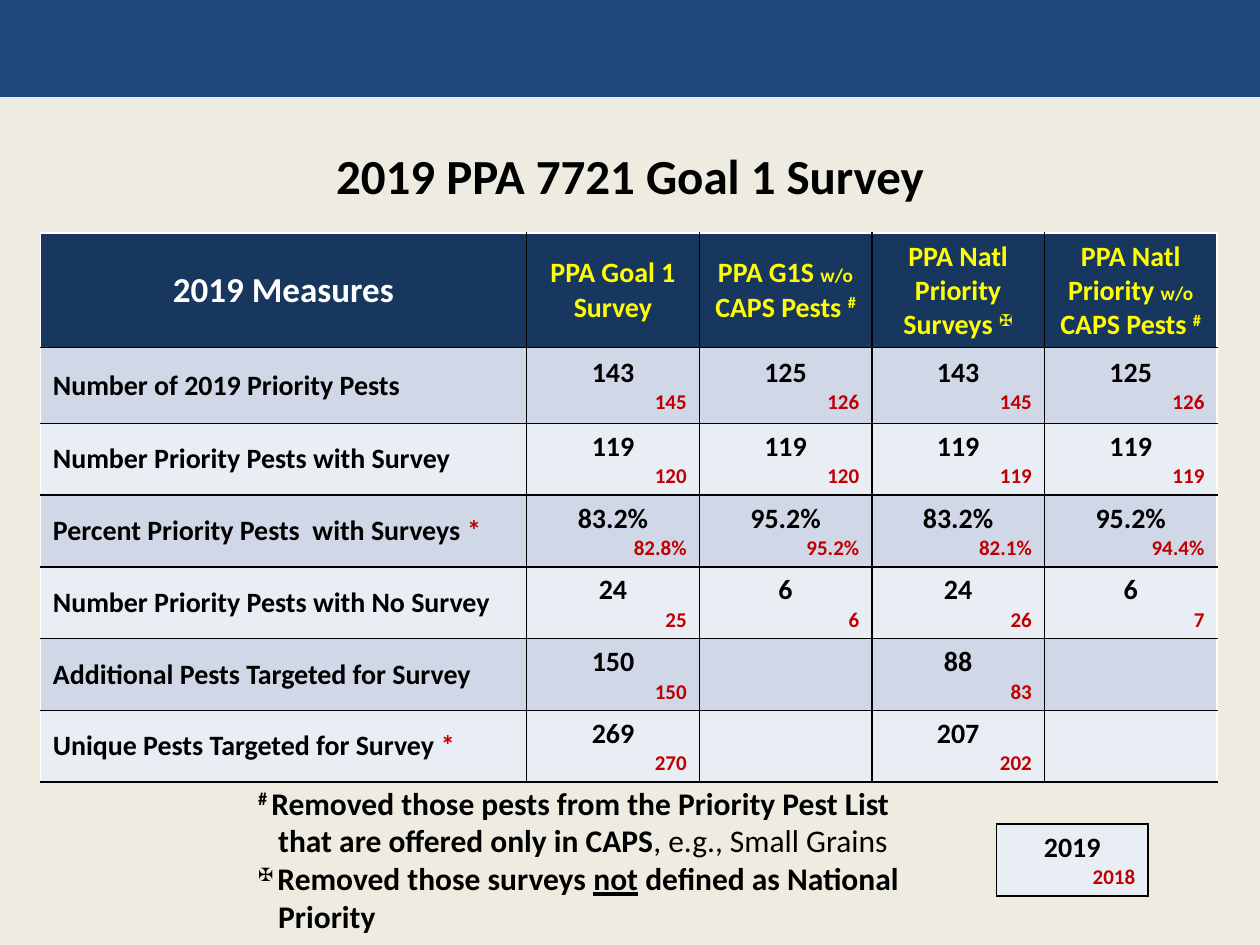
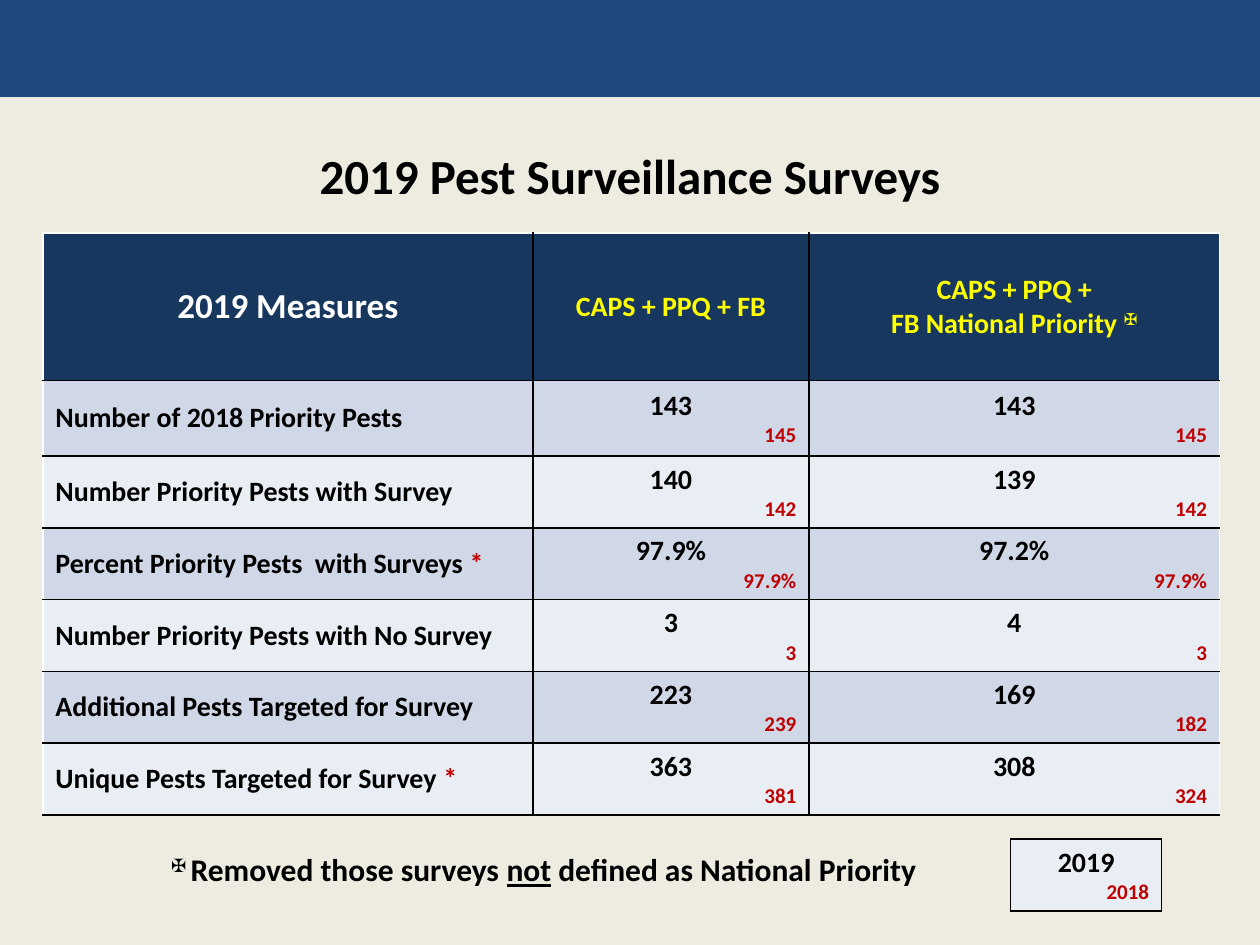
import pptx
import pptx.util
import pptx.dml.color
import pptx.enum.shapes
import pptx.enum.text
from lxml import etree
from pptx.oxml.ns import qn

Inches = pptx.util.Inches
Pt = pptx.util.Pt
ALIGN = pptx.enum.text.PP_ALIGN
ANCHOR = pptx.enum.text.MSO_ANCHOR

FONT = "Calibri"
PAPER, BAND, HEADER = "EEECE1", "1F497D", "17375E"
ROW_FILLS = ("D0D8E8", "E9EDF4")
BLACK, WHITE, YELLOW, RED = "000000", "FFFFFF", "FFFF00", "C00000"

MEASURES = [
    "Number of {year} Priority Pests",
    "Number Priority Pests with Survey",
    "Percent Priority Pests  with Surveys *",
    "Number Priority Pests with No Survey",
    "Additional Pests Targeted for Survey",
    "Unique Pests Targeted for Survey *",
]
HASH = ("#", {"base": 30})
CROSS = ("✠", {"base": 30})
WITHOUT = ("w/o", {"size": 11})
NOT_DEFINED = [("✠ ", {"base": 30, "bold": False}), "Removed those surveys ",
               ("not", {"underline": True}), " defined as National Priority"]


def rgb(color):
    return pptx.dml.color.RGBColor.from_string(color)


def add_run(p, text, size, color=BLACK, bold=True, underline=False, base=0):
    r = p.add_run()
    r.text = text
    f = r.font
    f.name, f.size, f.bold = FONT, Pt(size), bold
    f.color.rgb = rgb(color)
    if underline:
        f.underline = True
    if base:
        r._r.get_or_add_rPr().set("baseline", str(base * 1000))
    return r


def write(tf, paragraphs):
    """Fill a text frame from (alignment, size, color, runs) tuples; a run is text or (text, changes)."""
    for i, (align, size, color, runs) in enumerate(paragraphs):
        p = tf.paragraphs[0] if i == 0 else tf.add_paragraph()
        p.alignment = align
        for run in runs:
            text, changes = (run, {}) if isinstance(run, str) else run
            add_run(p, text, **{"size": size, "color": color, **changes})


def add_text(s, left, top, width, height, paragraphs, wrap=True):
    tf = s.shapes.add_textbox(Inches(left), Inches(top), Inches(width), Inches(height)).text_frame
    tf.word_wrap = wrap
    write(tf, paragraphs)
    return tf


def add_text_shadow(r):
    effects = etree.Element(qn("a:effectLst"))
    shadow = etree.SubElement(effects, qn("a:outerShdw"), blurRad="38100", dist="38100",
                              dir="2700000", algn="tl")
    black = etree.SubElement(shadow, qn("a:srgbClr"), val=BLACK)
    etree.SubElement(black, qn("a:alpha"), val="43000")
    r._r.rPr.find(qn("a:solidFill")).addnext(effects)


def set_borders(cell, colors):
    """Draw 1 pt borders; colors are in the order left, right, top, bottom."""
    tc_pr = cell._tc.get_or_add_tcPr()
    for i, (side, color) in enumerate(zip("LRTB", colors)):
        ln = etree.Element(qn("a:ln" + side), w="12700")
        fill = etree.SubElement(ln, qn("a:solidFill"))
        etree.SubElement(fill, qn("a:srgbClr"), val=color)
        tc_pr.insert(i, ln)


def fill_cell(cell, fill, paragraphs, borders, anchor=ANCHOR.MIDDLE):
    cell.vertical_anchor = anchor
    write(cell.text_frame, paragraphs)
    cell.fill.solid()
    cell.fill.fore_color.rgb = rgb(fill)
    set_borders(cell, borders)


def add_grid(s, left, top, widths, heights):
    """Add an unstyled table with the given column widths and row heights."""
    table = s.shapes.add_table(len(heights), len(widths), Inches(left), Inches(top),
                               Inches(sum(widths)), Inches(sum(heights))).table
    table.first_row = table.horz_banding = False
    for column, width in zip(table.columns, widths):
        column.width = Inches(width)
    for row, height in zip(table.rows, heights):
        row.height = Inches(height)
    return table


def year_pair(pair):
    """Current value in the centre, previous year's value below at the right."""
    if not pair:
        return []
    current, previous = pair
    return [(ALIGN.CENTER, 16, BLACK, [current]), (ALIGN.RIGHT, 12, RED, [previous])]


def measure_label(text):
    runs = [text]
    if text.endswith("*"):
        runs = [text[:-1], ("*", {"color": RED})]
    return [(ALIGN.LEFT, 16, BLACK, runs)]


def add_measures(s, left, widths, header_height, headers, year, values):
    table = add_grid(s, left, 1.85, widths, [header_height, 0.6] + [0.57] * 5)
    title = [(ALIGN.CENTER, 20, WHITE, ["2019 Measures"])]
    rows = [[title] + [[(ALIGN.CENTER, 16, YELLOW, line) for line in h] for h in headers]]
    for label, pairs in zip(MEASURES, values):
        rows.append([measure_label(label.format(year=year))] + [year_pair(v) for v in pairs])
    for i, row in enumerate(rows):
        fill = ROW_FILLS[(i - 1) % 2] if i else HEADER
        for j, paragraphs in enumerate(row):
            borders = (BLACK if j else WHITE, WHITE if j == len(row) - 1 else BLACK,
                       BLACK if i else WHITE, BLACK)
            fill_cell(table.cell(i, j), fill, paragraphs, borders)


def add_legend(s, left, top):
    table = add_grid(s, left, top, [1.2], [0.57])
    fill_cell(table.cell(0, 0), ROW_FILLS[1], year_pair(("2019", "2018")), [BLACK] * 4, ANCHOR.TOP)


def add_slide(prs, title):
    s = prs.slides.add_slide(prs.slide_layouts[6])
    s.background.fill.solid()
    s.background.fill.fore_color.rgb = rgb(PAPER)
    band = s.shapes.add_shape(pptx.enum.shapes.MSO_SHAPE.RECTANGLE, 0, 0, prs.slide_width, Inches(0.77))
    band.shadow.inherit = False
    band.fill.solid()
    band.fill.fore_color.rgb = rgb(BAND)
    band.line.fill.background()
    tf = add_text(s, 0.5, 1, 9, 0.78, [(ALIGN.CENTER, 28, BLACK, [title])])
    tf.vertical_anchor = ANCHOR.MIDDLE
    add_text_shadow(tf.paragraphs[0].runs[0])
    return s


def add_goal_slide(prs):
    s = add_slide(prs, "2019 PPA 7721 Goal 1 Survey")
    headers = [
        [["PPA Goal 1 Survey"]],
        [["PPA G1S ", WITHOUT, " CAPS Pests ", HASH]],
        [["PPA Natl Priority Surveys ", CROSS]],
        [["PPA Natl Priority ", WITHOUT, " CAPS Pests ", HASH]],
    ]
    values = [
        [("143", "145"), ("125", "126"), ("143", "145"), ("125", "126")],
        [("119", "120"), ("119", "120"), ("119", "119"), ("119", "119")],
        [("83.2%", "82.8%"), ("95.2%", "95.2%"), ("83.2%", "82.1%"), ("95.2%", "94.4%")],
        [("24", "25"), ("6", "6"), ("24", "26"), ("6", "7")],
        [("150", "150"), None, ("88", "83"), None],
        [("269", "270"), None, ("207", "202"), None],
    ]
    add_measures(s, 0.32, [3.86] + [1.37] * 4, 0.91, headers, 2019, values)
    removed = [("# ", {"base": 30}),
               "Removed those pests from the Priority Pest List that are offered only in CAPS",
               (", e.g., Small Grains", {"bold": False})]
    tf = add_text(s, 1.95, 6.17, 5.44, 1.31,
                  [(ALIGN.LEFT, 18, BLACK, runs) for runs in (removed, NOT_DEFINED)])
    for p in tf.paragraphs:
        p_pr = p._p.get_or_add_pPr()
        p_pr.set("marL", str(Inches(0.16)))
        p_pr.set("indent", str(-Inches(0.16)))
    add_legend(s, 7.91, 6.54)


def add_surveillance_slide(prs):
    s = add_slide(prs, "2019 Pest Surveillance Surveys")
    headers = [
        [["CAPS + PPQ + FB"]],
        [["CAPS + PPQ +"], ["FB National Priority ", CROSS]],
    ]
    values = [
        [("143", "145"), ("143", "145")],
        [("140", "142"), ("139", "142")],
        [("97.9%", "97.9%"), ("97.2%", "97.9%")],
        [("3", "3"), ("4", "3")],
        [("223", "239"), ("169", "182")],
        [("363", "381"), ("308", "324")],
    ]
    add_measures(s, 0.34, [3.89, 2.19, 3.26], 1.17, headers, 2018, values)
    add_text(s, 1.26, 6.7, 6.18, 0.4, [(ALIGN.LEFT, 18, BLACK, NOT_DEFINED)], wrap=False)
    add_legend(s, 8.02, 6.66)


def main():
    prs = pptx.Presentation()
    prs.slide_width, prs.slide_height = Inches(10), Inches(7.5)
    add_goal_slide(prs)
    add_surveillance_slide(prs)
    prs.save("out.pptx")


if __name__ == "__main__":
    main()
